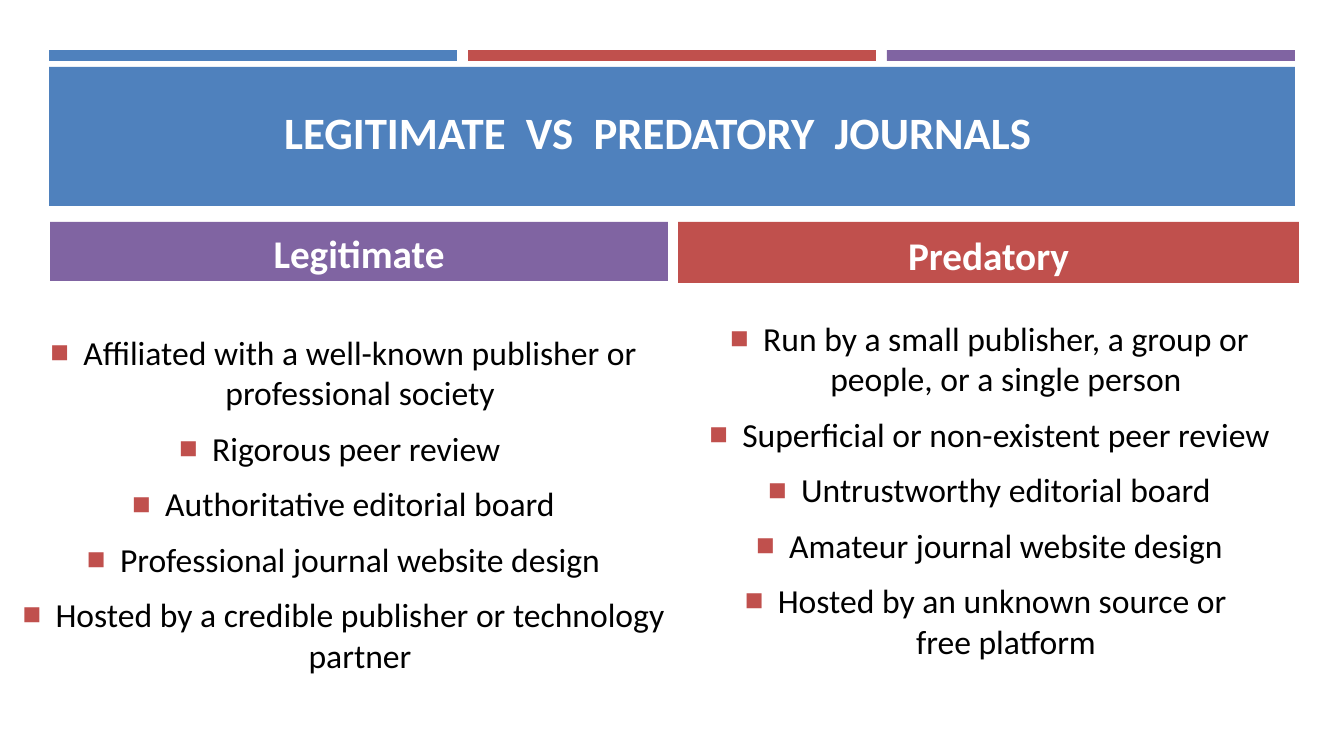
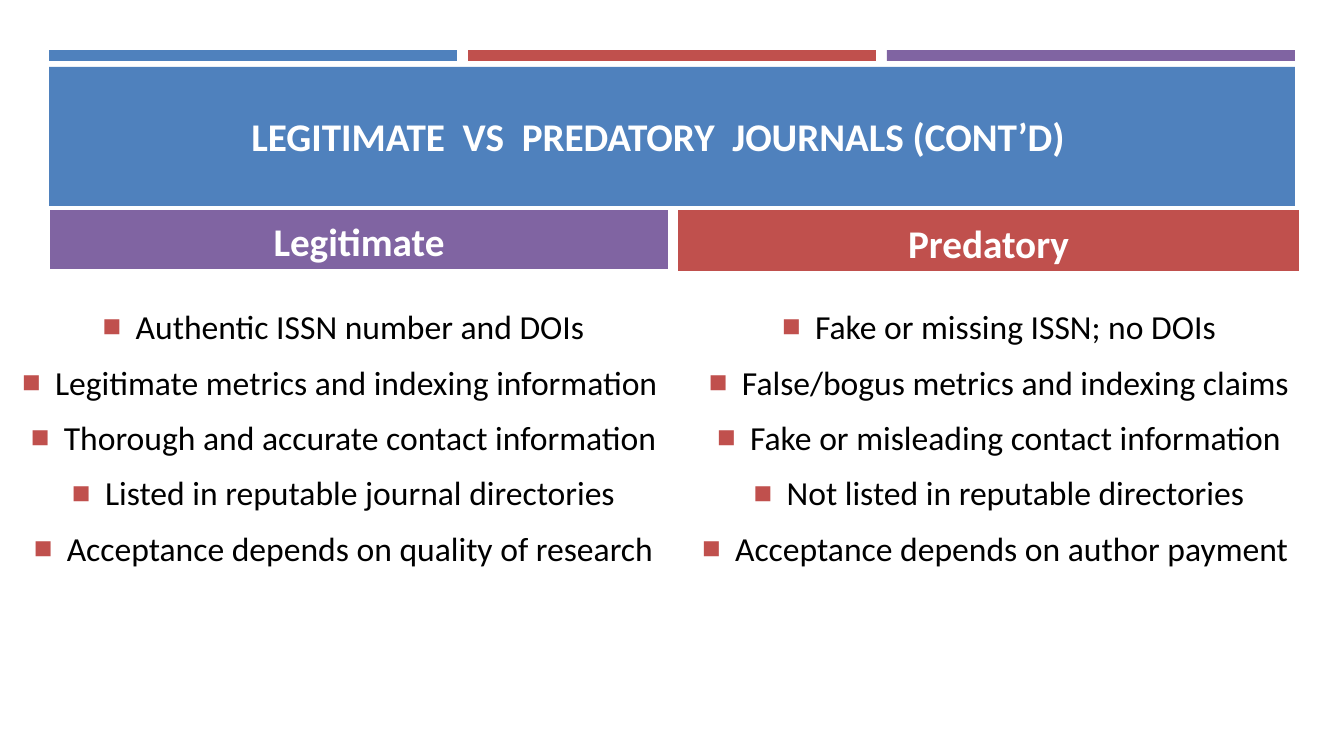
import lxml.etree
import pptx
import pptx.dml.color
import pptx.enum.shapes
import pptx.enum.text
import pptx.oxml
import pptx.oxml.ns
import pptx.util

PX = 914400 / 100.8
FONT = "Calibri"
BLUE, RED, PURPLE = "4F81BD", "C0504D", "8064A2"
WHITE, BLACK = "FFFFFF", "000000"
COMPARISON_LAYOUT = 4

TITLE_BOX = (50, 55, 1216, 109)
BANNER_BOX = (49, 67, 1246, 139)
STRIPE_BOX = (49, 50, 408, 11)
STRIPE_PITCH = 419
BULLET_INDENT = 33

COMPARISONS = [
    {
        "title": "LEGITIMATE  VS  PREDATORY  JOURNALS",
        "title_size": 32,
        "header_top": 222,
        "legitimate_box": (9, 327, 669, 429),
        "legitimate": [
            "Affiliated with a well-known publisher or professional society",
            "Rigorous peer review ",
            "Authoritative editorial board",
            "Professional journal website design",
            "Hosted by a credible publisher or technology partner",
        ],
        "predatory_box": (692, 313, 595, 397),
        "predatory": [
            "Run by a small publisher, a group or people, or a single person",
            "Superficial or non-existent peer review",
            "Untrustworthy editorial board",
            "Amateur journal website design",
            "Hosted by an unknown source or \vfree platform",
        ],
    },
    {
        "title": "LEGITIMATE  VS  PREDATORY  JOURNALS (CONT’D)",
        "title_size": 28,
        "header_top": 210,
        "legitimate_box": (9, 301, 669, 429),
        "legitimate": [
            "Authentic ISSN number and DOIs",
            "Legitimate metrics and indexing information ",
            "Thorough and accurate contact information",
            "Listed in reputable journal directories",
            "Acceptance depends on quality of research",
        ],
        "predatory_box": (692, 301, 614, 397),
        "predatory": [
            "Fake or missing ISSN; no DOIs",
            "False/bogus metrics and indexing claims",
            "Fake or misleading contact information",
            "Not listed in reputable directories",
            "Acceptance depends on author payment ",
        ],
    },
]


def px(length):
    """Turn whole px into EMU."""
    return pptx.util.Emu(round(length * PX))


def color(hex_code):
    """Turn a hex string into a colour."""
    return pptx.dml.color.RGBColor.from_string(hex_code)


def fill_shape(shape, hex_code):
    """Give a shape a solid fill and no line."""
    shape.fill.solid()
    shape.fill.fore_color.rgb = color(hex_code)
    shape.line.fill.background()


def fill_placeholder(placeholder, box, text, size, hex_code, bold=False):
    """Move a placeholder to its box and set its centred text."""
    placeholder.left, placeholder.top, placeholder.width, placeholder.height = map(px, box)
    frame = placeholder.text_frame
    frame.text = text
    frame.word_wrap = True
    frame.auto_size = pptx.enum.text.MSO_AUTO_SIZE.NONE
    for paragraph in frame.paragraphs:
        paragraph.alignment = pptx.enum.text.PP_ALIGN.CENTER
        for run in paragraph.runs:
            run.font.name = FONT
            run.font.size = pptx.util.Pt(size)
            run.font.bold = bold
            run.font.color.rgb = color(hex_code)
    return frame


def add_bullet(paragraph):
    """Give a paragraph a hanging red square bullet."""
    properties = paragraph._p.get_or_add_pPr()
    properties.set("marL", str(px(BULLET_INDENT)))
    properties.set("indent", str(-px(BULLET_INDENT)))
    bullet_color = lxml.etree.SubElement(properties, pptx.oxml.ns.qn("a:buClr"))
    lxml.etree.SubElement(bullet_color, pptx.oxml.ns.qn("a:srgbClr"), val=RED)
    lxml.etree.SubElement(properties, pptx.oxml.ns.qn("a:buSzPct"), val="92000")
    lxml.etree.SubElement(properties, pptx.oxml.ns.qn("a:buChar"), char="■")


def add_layout_bands(layout, slide):
    """Draw the stripes and title banner and keep them in the layout."""
    left, top, width, height = STRIPE_BOX
    bands = [
        ((left + index * STRIPE_PITCH, top, width, height), hex_code)
        for index, hex_code in enumerate((BLUE, RED, PURPLE))
    ]
    bands.append((BANNER_BOX, BLUE))
    for position, (box, hex_code) in enumerate(bands, start=2):
        band = slide.shapes.add_shape(
            pptx.enum.shapes.MSO_SHAPE.RECTANGLE, *map(px, box)
        )
        band.shadow.inherit = False
        fill_shape(band, hex_code)
        layout.shapes.element.insert(position, band.element)


def add_title(slide, text, size):
    """Place the slide title on the banner."""
    frame = fill_placeholder(slide.shapes.title, TITLE_BOX, text, size, WHITE, True)
    frame.vertical_anchor = pptx.enum.text.MSO_ANCHOR.BOTTOM


def add_column(header, points, heading, header_box, hex_code, points_box, items):
    """Place one coloured column heading and its bulleted list."""
    fill_shape(header, hex_code)
    heading_frame = fill_placeholder(header, header_box, heading, 28, WHITE, True)
    heading_frame.vertical_anchor = pptx.enum.text.MSO_ANCHOR.BOTTOM
    heading_frame.paragraphs[0].space_after = pptx.util.Pt(6)

    points_frame = fill_placeholder(points, points_box, "", 24, BLACK)
    for index, item in enumerate(items):
        paragraph = points_frame.paragraphs[0] if index == 0 else points_frame.add_paragraph()
        paragraph.text = item
        paragraph.alignment = pptx.enum.text.PP_ALIGN.CENTER
        paragraph.space_after = pptx.util.Pt(6)
        add_bullet(paragraph)
        for run in paragraph.runs:
            run.font.name = FONT
            run.font.size = pptx.util.Pt(24)
            run.font.color.rgb = color(BLACK)


def add_comparison(slide, content):
    """Fill a comparison slide with its title and two columns."""
    add_title(slide, content["title"], content["title_size"])
    parts = slide.placeholders
    top = content["header_top"]
    add_column(parts[1], parts[2], "Legitimate", (50, top, 618, 59), PURPLE,
               content["legitimate_box"], content["legitimate"])
    add_column(parts[3], parts[4], "Predatory", (678, top, 621, 61), RED,
               content["predatory_box"], content["predatory"])


def main():
    """Build and save the presentation."""
    presentation = pptx.Presentation()
    presentation.slide_width, presentation.slide_height = px(1344), px(756)
    layout = presentation.slide_layouts[COMPARISON_LAYOUT]
    slides = [presentation.slides.add_slide(layout) for _ in COMPARISONS]
    add_layout_bands(layout, slides[0])
    for slide, content in zip(slides, COMPARISONS):
        add_comparison(slide, content)
    presentation.save("out.pptx")


if __name__ == "__main__":
    main()
